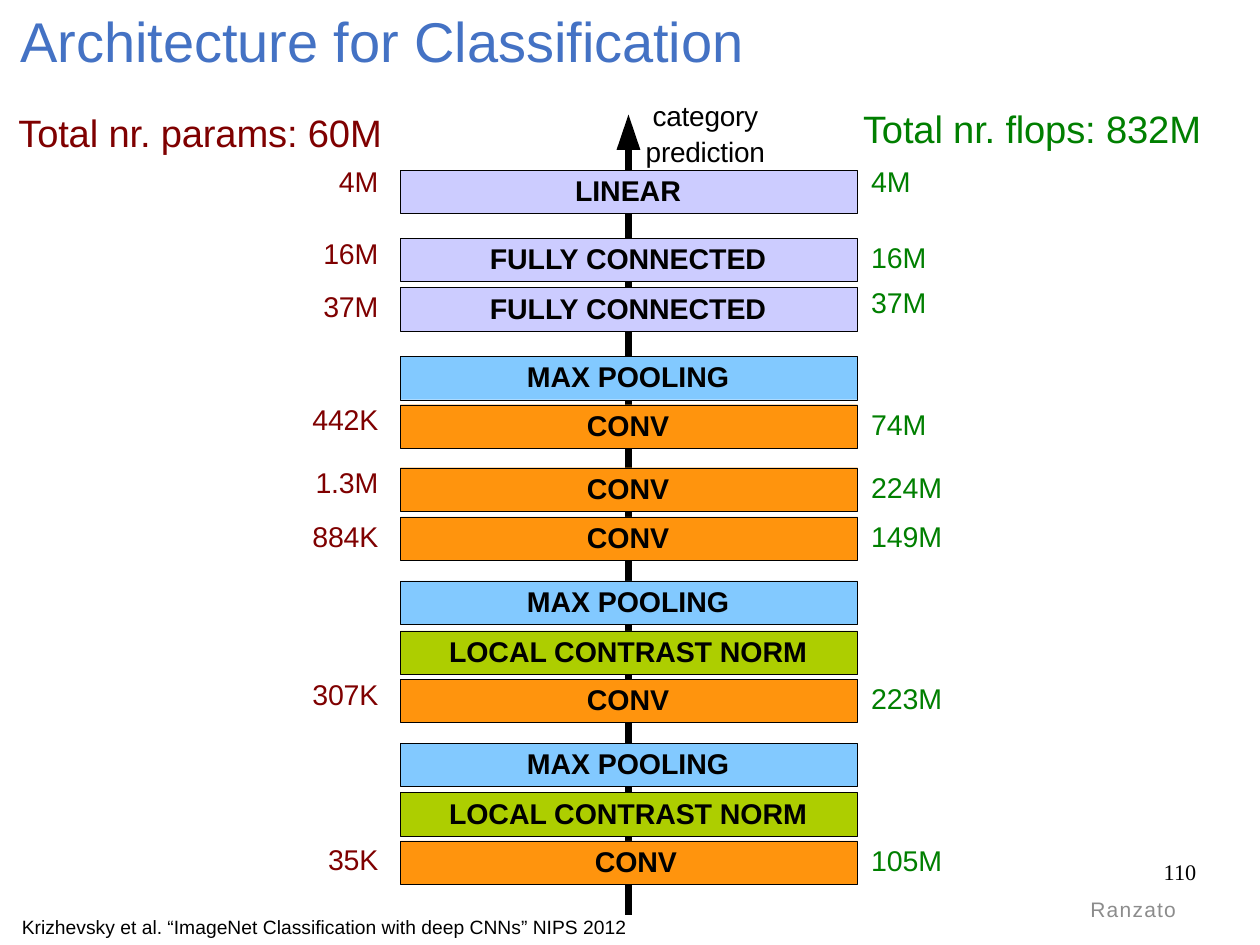
"""Build a slide of a classification network with its layers, parameters and flops."""
from lxml.etree import SubElement
from pptx import Presentation
from pptx.dml.color import RGBColor
from pptx.enum.shapes import MSO_CONNECTOR as Connector, MSO_SHAPE as Shape
from pptx.enum.text import MSO_ANCHOR as Anchor, MSO_AUTO_SIZE as AutoSize, PP_ALIGN as Align
from pptx.oxml.ns import qn
from pptx.util import Cm, Pt

COLORS = {
    "black": "000000", "title": "4472C4", "params": "7F0000", "flops": "007F00",
    "grey": "8C8C8C", "dense": "CCCCFF", "pool": "82C9FF", "conv": "FF940D", "norm": "ADCE00",
}
FRAME = {
    "margin_left": 0, "margin_right": 0, "margin_top": 0, "margin_bottom": Cm(0.07),
    "word_wrap": True, "auto_size": AutoSize.NONE, "vertical_anchor": Anchor.MIDDLE,
}
KINDS = {
    "LINEAR": "dense", "FULLY CONNECTED": "dense", "MAX POOLING": "pool",
    "LOCAL CONTRAST NORM": "norm", "CONV": "conv",
}
LAYERS = [
    ("LINEAR", 3.43), ("FULLY CONNECTED", 4.8), ("FULLY CONNECTED", 5.8),
    ("MAX POOLING", 7.18), ("CONV", 8.16), ("CONV", 9.43), ("CONV", 10.42),
    ("MAX POOLING", 11.71), ("LOCAL CONTRAST NORM", 12.72), ("CONV", 13.69),
    ("MAX POOLING", 14.98), ("LOCAL CONTRAST NORM", 15.98), ("CONV", 16.95),
]
COSTS = [
    ("4M", 3.69, "4M", 3.69), ("16M", 5.14, "16M", 5.22), ("37M", 6.21, "37M", 6.13),
    ("442K", 8.49, "74M", 8.59), ("1.3M", 9.76, "224M", 9.86), ("884K", 10.85, "149M", 10.85),
    ("307K", 14.03, "223M", 14.11), ("35K", 17.36, "105M", 17.38),
]
LAYER_HEIGHT = 0.88
AXIS = 12.67


def write(box, text, color, size, align=Align.LEFT, spacing=-10, name="Arial", bold=False):
    for key, value in FRAME.items():
        setattr(box.text_frame, key, value)
    para = box.text_frame.paragraphs[0]
    para.alignment = align
    span = para.add_run()
    span.text = text
    for key, value in {"name": name, "size": Pt(size), "bold": bold}.items():
        setattr(span.font, key, value)
    span.font.color.rgb = RGBColor.from_string(COLORS[color])
    span.font._element.set("spc", str(spacing))
    return para


def add_label(left, middle, width, height, *content, **style):
    box = page.shapes.add_textbox(Cm(left), Cm(middle - height / 2), Cm(width), Cm(height))
    return write(box, *content, **style)


deck = Presentation()
deck.slide_width, deck.slide_height = Cm(25.4), Cm(19.05)
page = deck.slides.add_slide(deck.slide_layouts[5])

title = page.shapes.title
title.left, title.top, title.width, title.height = Cm(0.41), Cm(0.1), Cm(21.9), Cm(1.47)
write(title, "Architecture for Classification", "title", 32, spacing=-5)

starts = [2.9] + [top + LAYER_HEIGHT for layer, top in LAYERS]
ends = [top for layer, top in LAYERS] + [18.44]
for start, end in zip(starts, ends):
    link = page.shapes.add_connector(Connector.STRAIGHT, Cm(AXIS), Cm(start), Cm(AXIS), Cm(end))
    link.line.width = Pt(4.4)
    link.line.color.rgb = RGBColor.from_string(COLORS["black"])
    SubElement(link._element.spPr, qn("a:effectLst"))

arrowhead = page.shapes.add_shape(Shape.ISOSCELES_TRIANGLE, Cm(AXIS - 0.24), Cm(2.31), Cm(0.48), Cm(0.71))
arrowhead.shadow.inherit = False
arrowhead.fill.solid()
arrowhead.fill.fore_color.rgb = RGBColor.from_string(COLORS["black"])
arrowhead.line.fill.background()

for layer, top in LAYERS:
    block = page.shapes.add_shape(Shape.RECTANGLE, Cm(8.07), Cm(top), Cm(9.22), Cm(LAYER_HEIGHT))
    block.shadow.inherit = False
    block.fill.solid()
    block.fill.fore_color.rgb = RGBColor.from_string(COLORS[KINDS[layer]])
    block.line.width = Pt(0.25)
    block.line.color.rgb = RGBColor.from_string(COLORS["black"])
    write(block, layer, "black", 16.3, align=Align.CENTER, spacing=-5, bold=True)
    block.text_frame.margin_right = Cm(0.04)
block.text_frame.margin_left = Cm(0.32)

add_label(0.13, 2.7, 7.57, 0.95, "Total nr. params: 60M", "params", 21.8, align=Align.RIGHT)
add_label(17.4, 2.62, 7.5, 0.95, "Total nr. flops: 832M", "flops", 21.8)
for params, params_middle, flops, flops_middle in COSTS:
    add_label(5.63, params_middle, 2, 0.68, params, "params", 16.3, align=Align.RIGHT)
    add_label(17.56, flops_middle, 2, 0.68, flops, "flops", 16.3, spacing=-5)

prediction = add_label(12.92, 2.7, 2.6, 1.42, "category prediction", "black", 16, align=Align.CENTER)
prediction.line_spacing = 1.08
add_label(0.44, 18.71, 20.1, 0.56, "Krizhevsky et al. “ImageNet Classification with deep CNNs” NIPS 2012",
          "black", 11, spacing=0)
add_label(21.52, 18.37, 2.65, 0.6, "Ranzato", "grey", 12, align=Align.CENTER, spacing=70)
add_label(23.46, 17.6, 0.8, 0.5, "110", "black", 12.7, spacing=0, name="Times New Roman")

deck.save("out.pptx")
